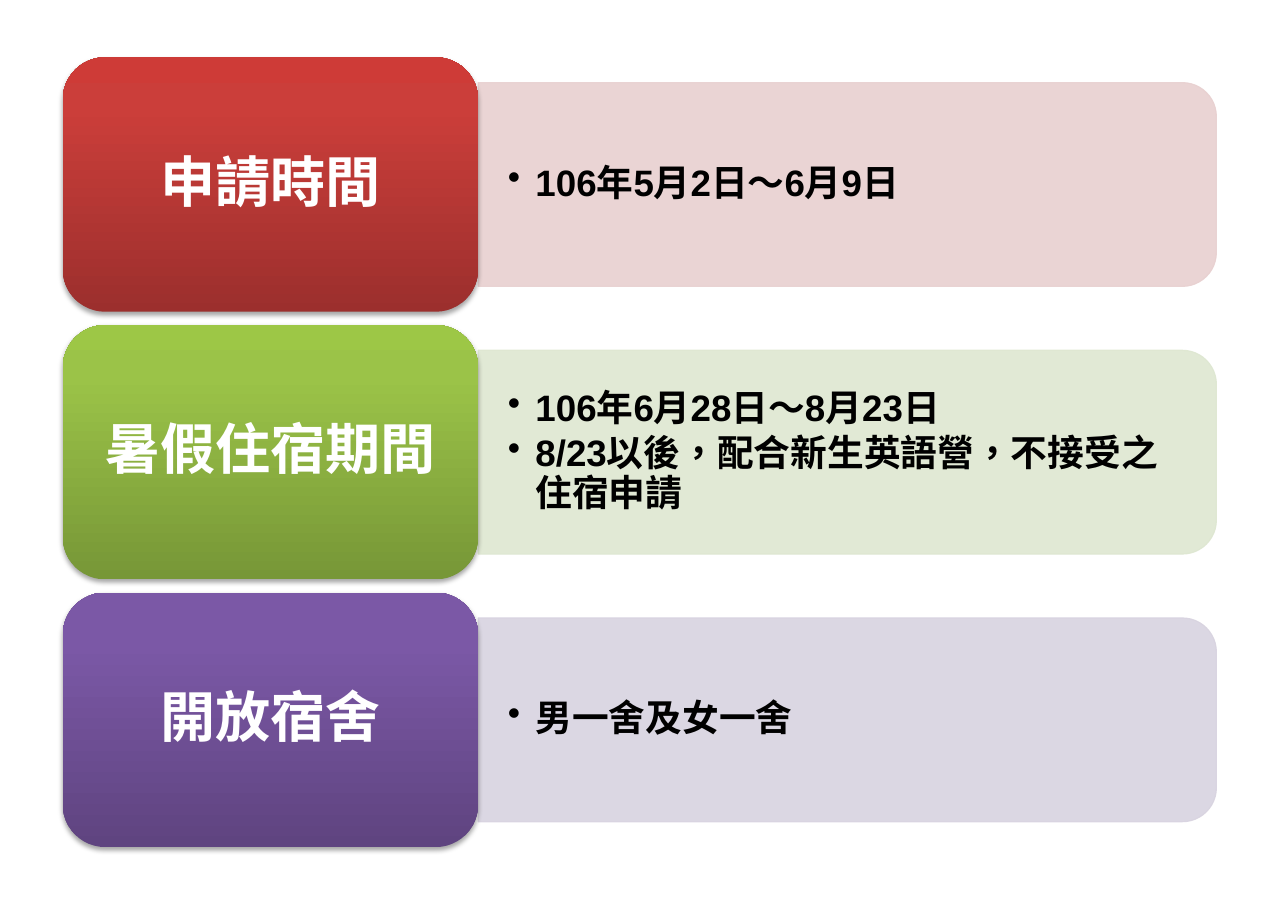
from copy import deepcopy

from lxml import etree
from pptx import Presentation
from pptx.dml.color import RGBColor
from pptx.enum.lang import MSO_LANGUAGE_ID
from pptx.enum.shapes import MSO_SHAPE
from pptx.enum.text import MSO_ANCHOR, PP_ALIGN
from pptx.oxml.ns import qn
from pptx.util import Inches, Pt

ROUNDED = MSO_SHAPE.ROUNDED_RECTANGLE
TWO_ROUNDED = MSO_SHAPE.ROUND_2_SAME_RECTANGLE
MIDDLE = MSO_ANCHOR.MIDDLE
LEFT, CENTER = PP_ALIGN.LEFT, PP_ALIGN.CENTER
CHINESE = MSO_LANGUAGE_ID.TRADITIONAL_CHINESE

BLACK = RGBColor(0x00, 0x00, 0x00)
WHITE = RGBColor(0xFF, 0xFF, 0xFF)
PINK = RGBColor(0xE8, 0xD0, 0xD0)
PALE_GREEN = RGBColor(0xDE, 0xE7, 0xD1)
LAVENDER = RGBColor(0xD8, 0xD3, 0xE0)
REDS = (RGBColor(0x9C, 0x2F, 0x2D), RGBColor(0xCB, 0x3E, 0x3A), RGBColor(0xCE, 0x3B, 0x37))
GREENS = (RGBColor(0x77, 0x97, 0x37), RGBColor(0x9B, 0xC3, 0x48), RGBColor(0x9D, 0xC7, 0x46))
PURPLES = (RGBColor(0x5F, 0x44, 0x80), RGBColor(0x7B, 0x58, 0xA6), RGBColor(0x7C, 0x57, 0xA8))
GRADIENT_POSITIONS = (0, 0.8, 1)

CARD_LEFT, CARD_TOP, CARD_WIDTH, CARD_HEIGHT = 0.57, 0.52, 3.77, 2.31
PANEL_LEFT, PANEL_WIDTH, PANEL_HEIGHT = 4.34, 6.7, 1.85
LIST_WIDTH, LIST_HEIGHT = 6.61, 1.67
ROW_GAP = 0.12

ROWS = [
    ("申請時間", ["106年5月2日～6月9日"], REDS, PINK),
    (
        "暑假住宿期間",
        ["106年6月28日～8月23日", "8/23以後，配合新生英語營，不接受之住宿申請"],
        GREENS,
        PALE_GREEN,
    ),
    ("開放宿舍", ["男一舍及女一舍"], PURPLES, LAVENDER),
]


def add_element(parent, tag, **attributes):
    return etree.SubElement(parent, qn(tag), attributes)


class SlideBuilder:
    font_name = "Arial"

    def __init__(self, slide):
        self.slide = slide

    def set_text(self, shape, lines, size, color, alignment, insets):
        frame = shape.text_frame
        frame.word_wrap = True
        frame.vertical_anchor = MIDDLE
        frame.margin_left = frame.margin_right = Inches(insets[0])
        frame.margin_top = frame.margin_bottom = Inches(insets[1])
        frame.text = "\n".join(lines)
        for paragraph in frame.paragraphs:
            paragraph.alignment = alignment
            paragraph.line_spacing = 0.9
            for run in paragraph.runs:
                run.font.name = self.font_name
                run.font.size = Pt(size)
                run.font.bold = True
                run.font.color.rgb = color
                run.font.language_id = CHINESE

    def panel(self, middle, color):
        center = PANEL_LEFT + PANEL_WIDTH / 2
        shape = self.slide.shapes.add_shape(
            TWO_ROUNDED,
            Inches(center - PANEL_HEIGHT / 2),
            Inches(middle - PANEL_WIDTH / 2),
            Inches(PANEL_HEIGHT),
            Inches(PANEL_WIDTH),
        )
        shape.rotation = 90
        shape.shadow.inherit = False
        shape.fill.solid()
        shape.fill.fore_color.rgb = color
        shape.line.color.rgb = color
        shape.line.width = Pt(0.75)
        for color_element in shape._element.spPr.iter(qn("a:srgbClr")):
            add_element(color_element, "a:alpha", val="90000")

    def bullet_list(self, middle, lines):
        shape = self.slide.shapes.add_textbox(
            Inches(PANEL_LEFT),
            Inches(middle - LIST_HEIGHT / 2),
            Inches(LIST_WIDTH),
            Inches(LIST_HEIGHT),
        )
        self.set_text(shape, lines, 24, BLACK, LEFT, (0.27, 0.14))
        for paragraph in shape.text_frame.paragraphs:
            paragraph.space_after = Pt(3.6)
            properties = paragraph._p.get_or_add_pPr()
            properties.set("marL", str(Inches(0.25)))
            properties.set("indent", str(Inches(-0.25)))
            add_element(properties, "a:buChar", char="•")

    def card(self, middle, title, colors):
        shape = self.slide.shapes.add_shape(
            ROUNDED,
            Inches(CARD_LEFT),
            Inches(middle - CARD_HEIGHT / 2),
            Inches(CARD_WIDTH),
            Inches(CARD_HEIGHT),
        )
        shape.line.fill.background()
        self.gradient(shape, colors)
        self.soft_shadow(shape)
        self.set_text(shape, [title], 36, WHITE, CENTER, (0.15, 0.07))

    def gradient(self, shape, colors):
        shape.fill.gradient()
        shape.fill.gradient_angle = 90
        stop_list = shape._element.spPr.find(".//" + qn("a:gsLst"))
        stop_list.append(deepcopy(stop_list[-1]))
        for stop, position, color in zip(shape.fill.gradient_stops, GRADIENT_POSITIONS, colors):
            stop.position = position
            stop.color.rgb = color

    def soft_shadow(self, shape):
        shape.shadow.inherit = False
        effects = shape._element.spPr.find(qn("a:effectLst"))
        shadow = add_element(
            effects,
            "a:outerShdw",
            blurRad=str(Pt(3.1)),
            dist=str(Pt(1.8)),
            dir="5400000",
            rotWithShape="0",
        )
        color_element = add_element(shadow, "a:srgbClr", val=str(BLACK))
        add_element(color_element, "a:alpha", val="35000")


def main():
    presentation = Presentation()
    presentation.slide_width = Inches(11.69)
    presentation.slide_height = Inches(8.27)
    blank_layout = presentation.slide_layouts[6]
    builder = SlideBuilder(presentation.slides.add_slide(blank_layout))
    for index, (title, lines, card_colors, panel_color) in enumerate(ROWS):
        middle = CARD_TOP + CARD_HEIGHT / 2 + index * (CARD_HEIGHT + ROW_GAP)
        builder.panel(middle, panel_color)
        builder.bullet_list(middle, lines)
        builder.card(middle, title, card_colors)
    presentation.save("out.pptx")


if __name__ == "__main__":
    main()
